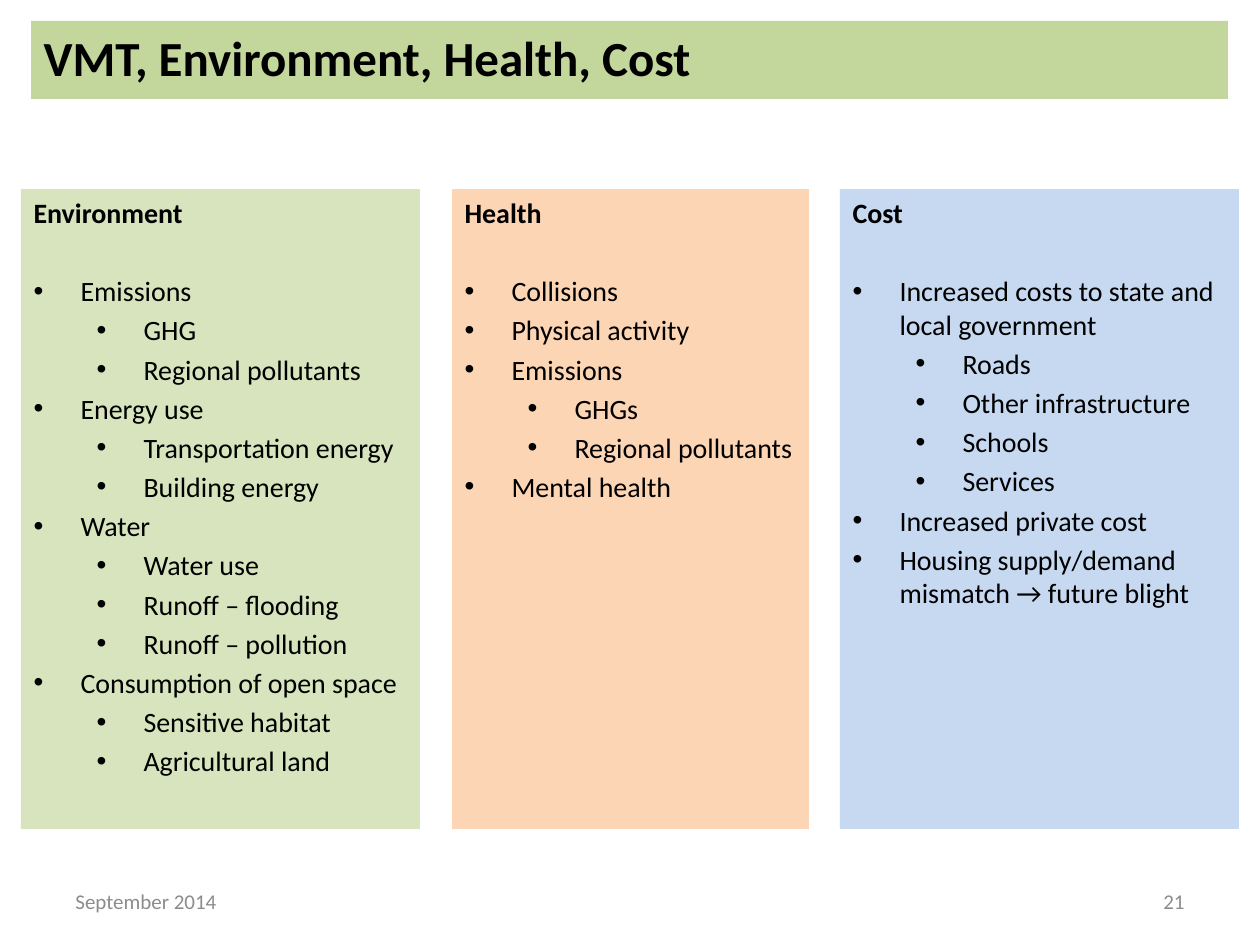
from lxml import etree
from pptx import Presentation
from pptx import util as u
from pptx.dml.color import RGBColor
from pptx.enum import text
from pptx.oxml import ns

FONT = "Calibri"
BLACK = RGBColor(0x00, 0x00, 0x00)
GREY = RGBColor(0x8C, 0x8C, 0x8C)
TITLE_GREEN = RGBColor(0xC3, 0xD6, 0x9B)
GREEN = RGBColor(0xD7, 0xE4, 0xBD)
ORANGE = RGBColor(0xFC, 0xD5, 0xB5)
BLUE = RGBColor(0xC6, 0xD9, 0xF1)

COLUMNS = [
    (21, 399, GREEN, "Environment", [
        (0, "Emissions"),
        (1, "GHG"),
        (1, "Regional pollutants"),
        (0, "Energy use"),
        (1, "Transportation energy"),
        (1, "Building energy"),
        (0, "Water"),
        (1, "Water use"),
        (1, "Runoff – flooding"),
        (1, "Runoff – pollution"),
        (0, "Consumption of open space"),
        (1, "Sensitive habitat"),
        (1, "Agricultural land"),
    ]),
    (452, 357, ORANGE, "Health", [
        (0, "Collisions"),
        (0, "Physical activity"),
        (0, "Emissions"),
        (1, "GHGs"),
        (1, "Regional pollutants"),
        (0, "Mental health"),
    ]),
    (840, 399, BLUE, "Cost", [
        (0, "Increased costs to state and local government"),
        (1, "Roads"),
        (1, "Other infrastructure"),
        (1, "Schools"),
        (1, "Services"),
        (0, "Increased private cost"),
        (0, "Housing supply/demand mismatch → future blight"),
    ]),
]


def px(value):
    return u.Emu(round(value * 914400 / 126))


def place(shape, left, top, width, height):
    shape.left, shape.top = px(left), px(top)
    shape.width, shape.height = px(width), px(height)


def format_runs(paragraph, size, color, bold=False):
    for run in paragraph.runs:
        run.font.name = FONT
        run.font.size = u.Pt(size)
        run.font.bold = bold
        run.font.color.rgb = color


def set_bullet(paragraph, margin, hanging, character=None):
    properties = paragraph._p.get_or_add_pPr()
    properties.set("marL", str(px(margin)))
    properties.set("indent", str(-px(hanging)))
    if character:
        etree.SubElement(properties, ns.qn("a:buFont"), typeface="Arial")
        etree.SubElement(properties, ns.qn("a:buChar"), char=character)
    else:
        etree.SubElement(properties, ns.qn("a:buNone"))


def prepare_panel(shape, color):
    shape.fill.solid()
    shape.fill.fore_color.rgb = color
    frame = shape.text_frame
    frame.word_wrap = True
    frame.auto_size = text.MSO_AUTO_SIZE.NONE
    frame.vertical_anchor = text.MSO_ANCHOR.TOP
    return frame


def fill_title(shape, title):
    place(shape, 31, 21, 1197, 78)
    frame = prepare_panel(shape, TITLE_GREEN)
    frame.text = title
    paragraph = frame.paragraphs[0]
    paragraph.alignment = text.PP_ALIGN.LEFT
    format_runs(paragraph, 28, BLACK, bold=True)


def fill_column(shape, left, width, color, heading, items):
    place(shape, left, 189, width, 640)
    frame = prepare_panel(shape, color)
    frame.text = heading
    paragraph = frame.paragraphs[0]
    set_bullet(paragraph, 47, 47)
    paragraph.space_before = u.Pt(0)
    format_runs(paragraph, 16, BLACK, bold=True)
    for index, (level, item) in enumerate(items):
        paragraph = frame.add_paragraph()
        paragraph.text = item
        paragraph.level = level
        set_bullet(paragraph, 47 + 63 * level, 47, "•")
        paragraph.space_before = u.Pt(3.2 if index else 25.6)
        format_runs(paragraph, 16, BLACK)


def add_footer(slide, left, label, alignment):
    shape = slide.shapes.add_textbox(px(left), px(876), px(294), px(50))
    frame = shape.text_frame
    frame.word_wrap = True
    frame.vertical_anchor = text.MSO_ANCHOR.MIDDLE
    frame.text = label
    paragraph = frame.paragraphs[0]
    paragraph.alignment = alignment
    format_runs(paragraph, 12, GREY)


def main():
    presentation = Presentation()
    presentation.slide_width, presentation.slide_height = px(1260), px(945)
    slide = presentation.slides.add_slide(presentation.slide_layouts[4])
    title, *bodies = list(slide.placeholders)
    fill_title(title, "VMT, Environment, Health, Cost")
    for body, column in zip(bodies, COLUMNS):
        fill_column(body, *column)
    for spare in bodies[len(COLUMNS):]:
        spare.element.getparent().remove(spare.element)
    add_footer(slide, 63, "September 2014", text.PP_ALIGN.LEFT)
    add_footer(slide, 903, "21", text.PP_ALIGN.RIGHT)
    presentation.save("out.pptx")


if __name__ == "__main__":
    main()
